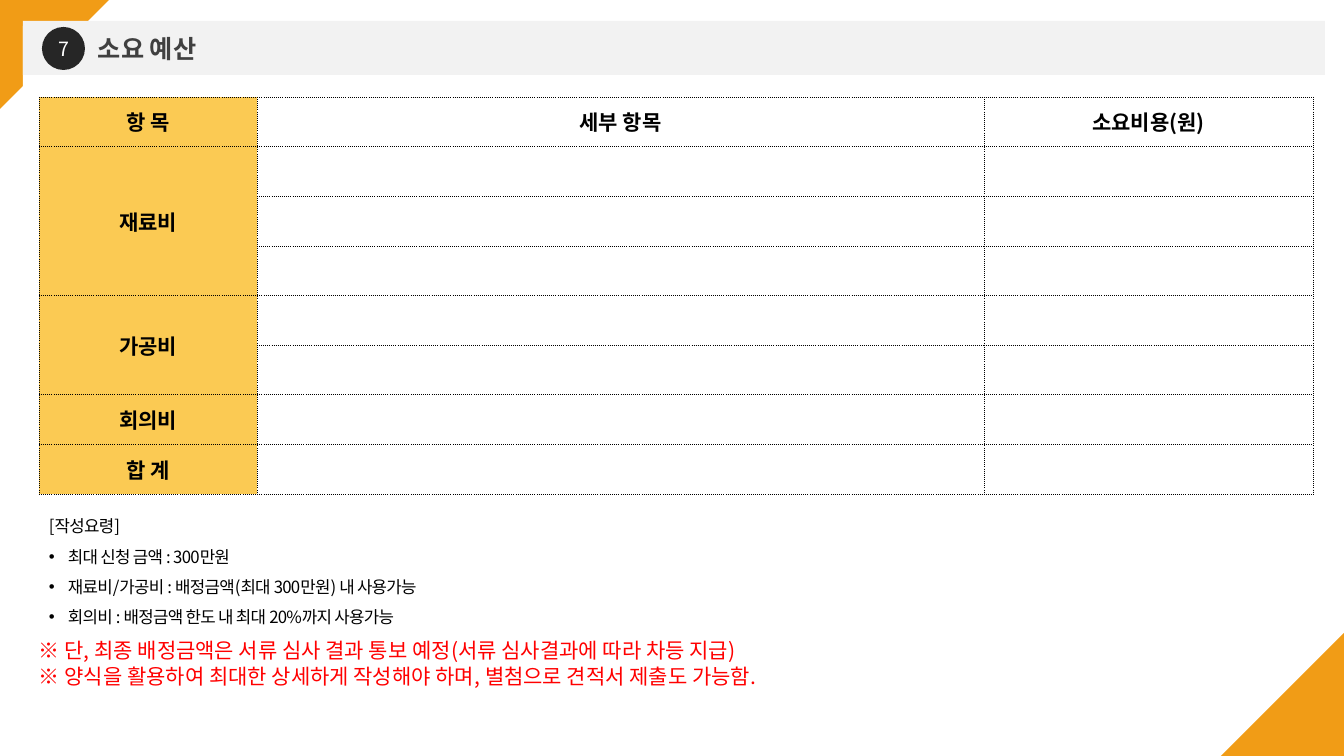
from lxml import etree
from pptx import Presentation
from pptx import util as u
from pptx.dml.color import RGBColor
from pptx.enum import shapes, text
from pptx.oxml.ns import qn

BLACK, WHITE = "000000", "FFFFFF"
ORANGE, YELLOW = "F19C16", "FBCA53"
LIGHT_GREY, TITLE_GREY, BADGE_GREY = "F2F2F2", "404040", "262626"
RED = "FF0000"


def px(count):
    return u.Emu(round(count * 914400 / 100.8))


def color(value):
    return RGBColor.from_string(value)


def child(parent, tag, **attributes):
    return etree.SubElement(parent, qn(tag), attributes)


class SlideBuilder:
    font = "Noto Sans CJK KR"
    indent = 19

    def __init__(self, deck):
        self.page = deck.slides.add_slide(deck.slide_layouts[6])

    def add_text(self, frame, content, size=15, ink=BLACK, bold=False, align=text.PP_ALIGN.LEFT,
                 line=None, spacing=None, bullets_from=None):
        """Fill a text frame, one paragraph per line, bulleted from the given index on."""
        for index, words in enumerate(content.split("\n")):
            para = frame.paragraphs[0] if index == 0 else frame.add_paragraph()
            para.alignment = align
            if line:
                para.line_spacing = line
            if bullets_from is not None and index >= bullets_from:
                props = para._p.get_or_add_pPr()
                props.set("marL", str(px(self.indent)))
                props.set("indent", str(-px(self.indent)))
                child(props, "a:buFont", typeface="Arial")
                child(props, "a:buChar", char="•")
            span = para.add_run()
            span.text = words
            span.font.size = u.Pt(size)
            span.font.bold = bold
            span.font.color.rgb = color(ink)
            span.font.name = self.font
            props = span._r.get_or_add_rPr()
            child(props, "a:ea", typeface=self.font)
            if spacing:
                props.set("spc", str(round(spacing * 100)))

    def shape(self, kind, left, top, width, height, fill, rotation=0):
        item = self.page.shapes.add_shape(kind, px(left), px(top), px(width), px(height))
        item.shadow.inherit = False
        item.fill.solid()
        item.fill.fore_color.rgb = color(fill)
        item.line.fill.background()
        item.rotation = rotation
        return item

    def badge(self, left, top, size, label):
        circle = self.shape(shapes.MSO_SHAPE.OVAL, left, top, size, size, BADGE_GREY)
        circle.text_frame.vertical_anchor = text.MSO_ANCHOR.MIDDLE
        self.add_text(circle.text_frame, label, size=14, ink=WHITE, align=text.PP_ALIGN.CENTER)

    def text_box(self, left, top, width, height, content, wrap=True, **style):
        box = self.page.shapes.add_textbox(px(left), px(top), px(width), px(height))
        box.text_frame.word_wrap = wrap
        box.text_frame.auto_size = text.MSO_AUTO_SIZE.SHAPE_TO_FIT_TEXT
        self.add_text(box.text_frame, content, **style)

    def dotted_border(self, cell):
        props = cell._tc.get_or_add_tcPr()
        for side in "LRTB":
            edge = child(props, f"a:ln{side}", w=str(u.Pt(0.25)))
            child(child(edge, "a:solidFill"), "a:srgbClr", val=BLACK)
            child(edge, "a:prstDash", val="sysDot")

    def table(self, left, top, widths, height, headings, groups):
        """Draw a heading row, then each group's label merged over its count of rows."""
        count = 1 + sum(rows for _, rows in groups)
        grid = self.page.shapes.add_table(
            count, len(widths), px(left), px(top), px(sum(widths)), px(height)).table
        grid.first_row = grid.horz_banding = False
        for column, width in zip(grid.columns, widths):
            column.width = px(width)
        for row in grid.rows:
            row.height = px(height / count)
            for index, cell in enumerate(row.cells):
                self.dotted_border(cell)
                cell.vertical_anchor = text.MSO_ANCHOR.MIDDLE
                if index == 0:
                    cell.fill.solid()
                    cell.fill.fore_color.rgb = color(YELLOW)
                else:
                    cell.fill.background()
        labels = [(0, index, heading) for index, heading in enumerate(headings)]
        start = 1
        for label, rows in groups:
            if rows > 1:
                grid.cell(start, 0).merge(grid.cell(start + rows - 1, 0))
            labels.append((start, 0, label))
            start += rows
        for row, column, label in labels:
            self.add_text(grid.cell(row, column).text_frame, label, bold=True,
                          align=text.PP_ALIGN.CENTER)


def main():
    deck = Presentation()
    deck.slide_width, deck.slide_height = px(1344), px(756)
    slide = SlideBuilder(deck)
    triangle, rectangle = shapes.MSO_SHAPE.RIGHT_TRIANGLE, shapes.MSO_SHAPE.RECTANGLE

    slide.shape(triangle, 0, -1, 110, 110, ORANGE, rotation=90)
    slide.shape(rectangle, 23, 26, 1302, 715, WHITE)
    slide.shape(rectangle, 23, 21, 1302, 54, LIGHT_GREY)
    slide.text_box(88, 28, 608, 40, "소요 예산", size=18, ink=TITLE_GREY, bold=True)
    slide.badge(42, 27, 43, "7")
    slide.shape(triangle, 1221, 633, 123, 123, ORANGE, rotation=270)

    slide.table(39, 97, [218, 727, 329], 397,
                ["항 목", "세부 항목", "소요비용(원)"],
                [("재료비", 3), ("가공비", 2), ("회의비", 1), ("합 계", 1)])

    slide.text_box(29, 633, 828, 61,
                   "※ 단, 최종 배정금액은 서류 심사 결과 통보 예정(서류 심사결과에 따라 차등 지급)\n"
                   "※ 양식을 활용하여 최대한 상세하게 작성해야 하며, 별첨으로 견적서 제출도 가능함.",
                   wrap=False, ink=RED)
    slide.text_box(39, 501, 623, 132,
                   "[작성요령]\n"
                   "최대 신청 금액 : 300만원\n"
                   "재료비/가공비 : 배정금액(최대 300만원) 내 사용가능\n"
                   "회의비 : 배정금액 한도 내 최대 20%까지 사용가능",
                   size=12, line=1.5, spacing=-0.5, bullets_from=1)
    deck.save("out.pptx")


if __name__ == "__main__":
    main()
